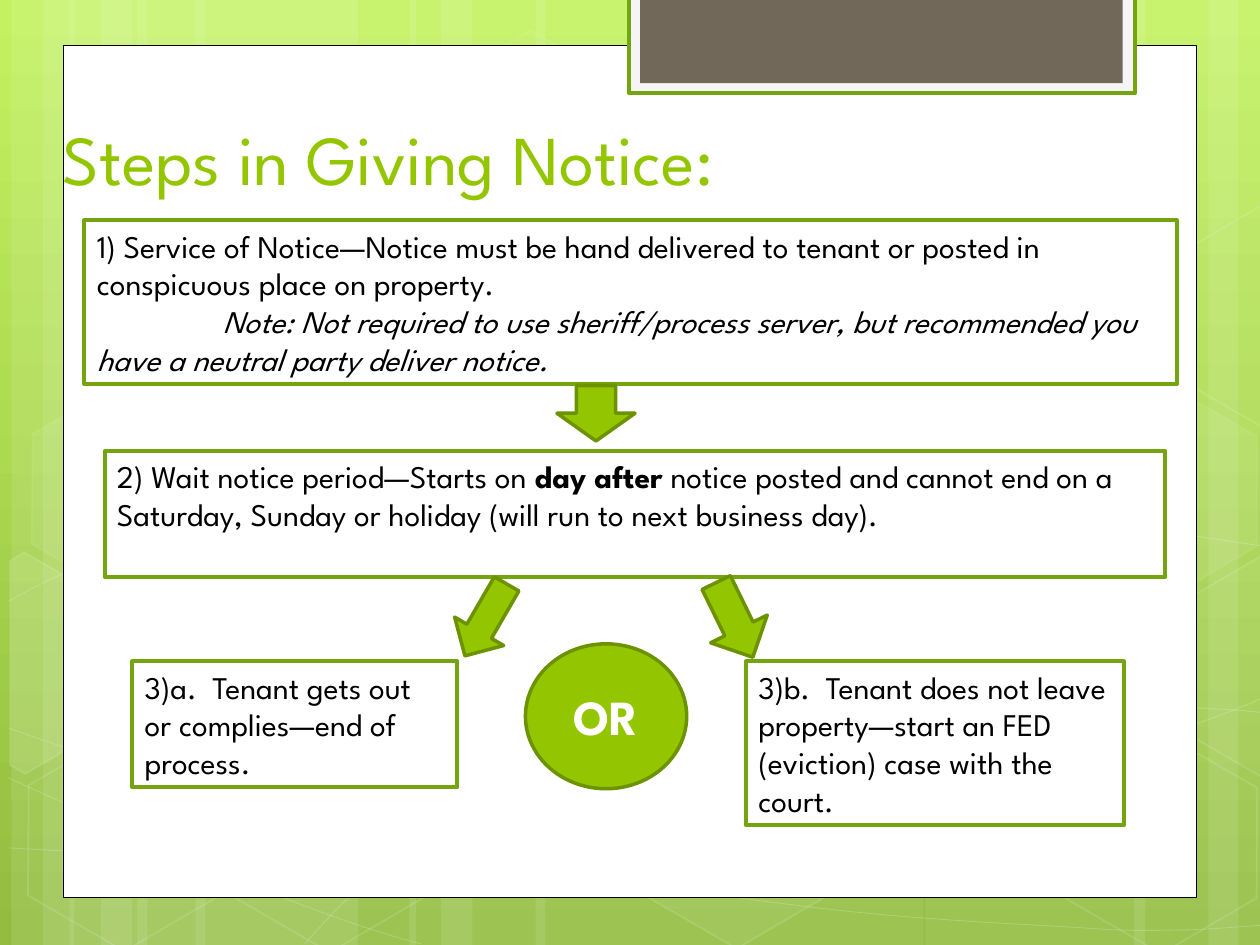
from math import cos, radians, sin

from lxml.etree import SubElement
from pptx import Presentation
from pptx.dml.color import RGBColor
from pptx.enum.shapes import MSO_SHAPE as Kind
from pptx.enum.text import MSO_ANCHOR as Anchor, PP_ALIGN as Align
from pptx.oxml.ns import qn
from pptx.util import Inches, Pt

FONT = "League Spartan"
WHITE, BLACK = "FFFFFF", "000000"
LIME, MOSS, LEAF = "94C600", "6D9200", "74A510"
TILT = 30

BANDS = [(1.09, 1.75), (0.09, 0.5), (0.34, 0.83), (1.55, 1.75), (0.55, 0.5),
         (0.8, 0.83), (7.34, 1.75), (9.59, 0.5), (9, 0.83), (4.25, 3.08),
         (3.25, 0.5), (3.5, 0.83)]

# Each curve: a start point, then cubic segments of two handles and an end.
CURVES = [
    [(0.07, 6.73), (0.61, 6.76), (1.15, 6.79), (1.9, 6.78), (2.65, 6.77),
     (3.58, 6.75), (4.58, 6.65), (5.58, 6.55), (7, 6.36), (7.92, 6.17),
     (8.83, 5.98), (9.77, 5.68), (10.07, 5.51)],
    [(0.07, 4.77), (0.36, 4.61), (0.65, 4.46), (1.21, 4.31), (1.78, 4.16),
     (2.59, 3.94), (3.47, 3.87), (4.36, 3.8), (5.44, 3.79), (6.54, 3.87),
     (7.64, 3.95), (9.47, 4.26), (10.07, 4.34)],
    [(0.06, 6.17), (1.27, 6.72), (2.47, 7.27), (3.34, 7.49)],
    [(0.07, 5.78), (0.38, 5.89), (0.7, 6), (1.28, 6.16), (1.86, 6.31),
     (2.73, 6.56), (3.57, 6.73), (4.4, 6.9), (5.45, 7.08), (6.28, 7.18),
     (7.11, 7.29), (8, 7.33), (8.53, 7.36), (9.05, 7.4), (9.19, 7.38),
     (9.45, 7.38), (9.71, 7.37), (9.89, 7.35), (10.07, 7.34)],
    [(2.42, 7.49), (2.6, 7.29), (2.78, 7.09), (3.02, 6.91), (3.26, 6.72),
     (3.6, 6.53), (3.88, 6.39), (4.16, 6.25), (4.33, 6.19), (4.69, 6.09),
     (5.06, 5.99), (5.73, 5.85), (6.08, 5.78), (6.43, 5.71), (6.49, 5.71),
     (6.8, 5.69), (7.11, 5.66), (7.6, 5.63), (7.94, 5.62), (8.29, 5.61),
     (8.86, 5.62), (8.86, 5.62), (9.08, 5.62), (9.3, 5.62), (9.53, 5.62),
     (9.71, 5.63), (9.88, 5.64), (9.97, 5.65), (10.06, 5.66), (10.03, 5.65),
     (10.06, 5.66)],
]

# Left, top, fill opacity, line opacity
CELLS = [(3.34, 0.36, 4, 8), (4.97, 5.89, 6, 12), (0.11, 5.91, 0, 12),
         (0.14, 3.12, 7, 8), (1.74, 5.92, 0, 12), (7.53, 4.53, 10, 12),
         (8.34, 5.93, 0, 12), (8.34, 3.14, 7, 8)]

# Cells cut off by the slide edge: centre, corners, fill opacity
RIGHT = [(9.26, 4.85), (10.01, 4.41), (10.09, 4.46), (10.09, 6.13),
         (10.02, 6.17), (9.26, 5.73)]
SHARDS = [
    ((0.36, 5.35), [(0.08, 4.45), (0.19, 4.38), (0.96, 4.82), (0.95, 5.7),
                    (0.2, 6.14), (0.08, 6.07)], 10),
    ((9.85, 5.19), RIGHT, 4),
    ((9.85, 2.41), [(x, y - 2.78) for x, y in RIGHT], 0),
]


def rgb(code):
    return RGBColor.from_string(code)


def fade(host, alpha):
    """Set the opacity, in percent, of the solid fill held by an XML element."""
    color = host.find(qn("a:solidFill")).find(qn("a:srgbClr"))
    SubElement(color, qn("a:alpha")).set("val", str(alpha * 1000))


def paint(shape, fill=None, line=None, width=1, clear=100, faint=100):
    """Style a shape; clear and faint are fill and line opacity in percent."""
    shape.shadow.inherit = False
    props = shape.element.spPr
    if fill and clear:
        shape.fill.solid()
        shape.fill.fore_color.rgb = rgb(fill)
        if clear < 100:
            fade(props, clear)
    else:
        shape.fill.background()
    if line:
        shape.line.color.rgb = rgb(line)
        shape.line.width = Pt(width)
        if faint < 100:
            fade(props.find(qn("a:ln")), faint)
    else:
        shape.line.fill.background()
    return shape


def add(slide, kind, box, turn=0, **style):
    shape = slide.shapes.add_shape(kind, *map(Inches, box))
    shape.rotation = turn
    return paint(shape, **style)


def trace(slide, points, close, **style):
    spots = [(Inches(x), Inches(y)) for x, y in points]
    pen = slide.shapes.build_freeform(*spots[0])
    pen.add_line_segments(spots[1:], close=close)
    return paint(pen.convert_to_shape(), **style)


def draw_curve(slide, points):
    """Trace the end points, then swap each straight segment for a cubic."""
    shape = trace(slide, points[::3], False, line=WHITE, width=0.5, faint=20)
    lines = list(shape.element.iter(qn("a:lnTo")))
    for n, line in enumerate(lines):
        route = line.getparent()
        cubic = SubElement(route, qn("a:cubicBezTo"))
        for x, y in points[3 * n + 1:3 * n + 4]:
            spot = SubElement(cubic, qn("a:pt"))
            spot.set("x", str(Inches(x) - shape.left))
            spot.set("y", str(Inches(y) - shape.top))
        route.replace(line, cubic)


def draw_shard(slide, mid, points, clear):
    """Trace the corners turned back about mid, then tilt the whole shape."""
    c, s = cos(radians(TILT)), sin(radians(TILT))
    rel = [(x - mid[0], y - mid[1]) for x, y in points]
    flat = [(mid[0] + x * c + y * s, mid[1] - x * s + y * c) for x, y in rel]
    shape = trace(slide, flat, True, fill=WHITE, line=WHITE, clear=clear, faint=12)
    shape.rotation = TILT


def write(shape, lines, size=18, color=BLACK, align=Align.LEFT,
          anchor=Anchor.TOP, inset=(0.1, 0.05)):
    """Fill a shape with lines, each a list of (text, style) runs."""
    frame = shape.text_frame
    frame.word_wrap = True
    frame.vertical_anchor = anchor
    frame.margin_left = frame.margin_right = Inches(inset[0])
    frame.margin_top = frame.margin_bottom = Inches(inset[1])
    for i, runs in enumerate(lines):
        para = frame.add_paragraph() if i else frame.paragraphs[0]
        para.alignment = align
        para.font.name, para.font.size = FONT, Pt(size)
        para.font.color.rgb = rgb(color)
        for text, style in runs:
            run = para.add_run()
            run.text = text
            if style == "bold":
                run.font.bold = True
            elif style == "slant":
                run.font.italic = True


def draw_back(slide, high):
    fill = slide.background.fill
    fill.gradient()
    fill.gradient_angle = 270
    for stop, code in zip(fill.gradient_stops, ("C2F25F", "92BD3F")):
        stop.color.rgb = rgb(code)
    for left, wide in BANDS:
        add(slide, Kind.RECTANGLE, (left, 0, wide, high), fill=WHITE, clear=10)
    for points in CURVES:
        draw_curve(slide, points)
    for left, top, clear, faint in CELLS:
        cell = add(slide, Kind.HEXAGON, (left, top, 1.75, 1.52), TILT,
                   fill=WHITE, line=WHITE, clear=clear, faint=faint)
        cell.adjustments[0] = 0.285
        cell.adjustments[1] = 1.155
    for shard in SHARDS:
        draw_shard(slide, *shard)


def draw_page(slide, left, top, wide, high):
    add(slide, Kind.RECTANGLE, (left, top, wide, high),
        fill=WHITE, line=BLACK, width=0.5)
    add(slide, Kind.RECTANGLE, (left + 4.49, -0.02, 4.02, 0.76),
        fill="F5F5F5", line=LEAF, width=2)
    add(slide, Kind.RECTANGLE, (left + 4.58, -0.02, 3.83, 0.68), fill="71685A")
    title = slide.shapes.add_textbox(*map(Inches, (left, top - 0.03, 6.36, 1.25)))
    write(title, [[("Steps in Giving Notice:", "")]], 40, LIME,
          anchor=Anchor.BOTTOM, inset=(0, 0))


def draw_steps(slide, left, top):
    steps = [
        ((0, 0, 8.67, 1.3), [
            [("1) Service of Notice—Notice must be hand delivered to tenant "
              "or posted in conspicuous place on property.", "")],
            [("Note: Not required to use sheriff/process server, but "
              "recommended you have a neutral party deliver notice.", "slant")]]),
        ((0.16, 1.83, 8.42, 1), [
            [("2) Wait notice period—Starts on ", ""), ("day after", "bold"),
             (" notice posted and cannot end on a Saturday, Sunday or holiday "
              "(will run to next business day).", "")]]),
        ((0.38, 3.5, 2.58, 1), [
            [("3)a.  Tenant gets out or complies—end of process.", "")]]),
        ((5.25, 3.5, 3, 1.3), [
            [("3)b.  Tenant does not leave property—start an FED (eviction) "
              "case with the court.", "")]]),
    ]
    boxes = []
    for (x, y, wide, high), lines in steps:
        boxes.append(add(slide, Kind.RECTANGLE, (left + x, top + y, wide, high),
                         line=LEAF, width=2.25))
        write(boxes[-1], lines)
    note = boxes[0].text_frame.paragraphs[1]
    note._p.get_or_add_pPr().set("indent", str(Inches(1)))
    solid = dict(fill=LIME, line=MOSS, width=2)
    for x, y, wide, high, turn in [(3.75, 1.31, 0.62, 0.44, 0),
                                   (2.96, 2.84, 0.45, 0.66, 30.1),
                                   (4.91, 2.84, 0.5, 0.66, 333.9)]:
        add(slide, Kind.DOWN_ARROW, (left + x, top + y, wide, high), turn, **solid)
    disc = add(slide, Kind.OVAL, (left + 3.5, top + 3.36, 1.28, 1.15), **solid)
    write(disc, [[("OR", "bold")]], 28, WHITE, Align.CENTER, Anchor.MIDDLE)


def main():
    deck = Presentation()
    deck.slide_width, deck.slide_height = Inches(10), Inches(7.5)
    slide = deck.slides.add_slide(deck.slide_layouts[6])
    draw_back(slide, 7.5)
    draw_page(slide, 0.5, 0.36, 9, 6.76)
    draw_steps(slide, 0.67, 1.75)
    deck.save("out.pptx")


if __name__ == "__main__":
    main()
